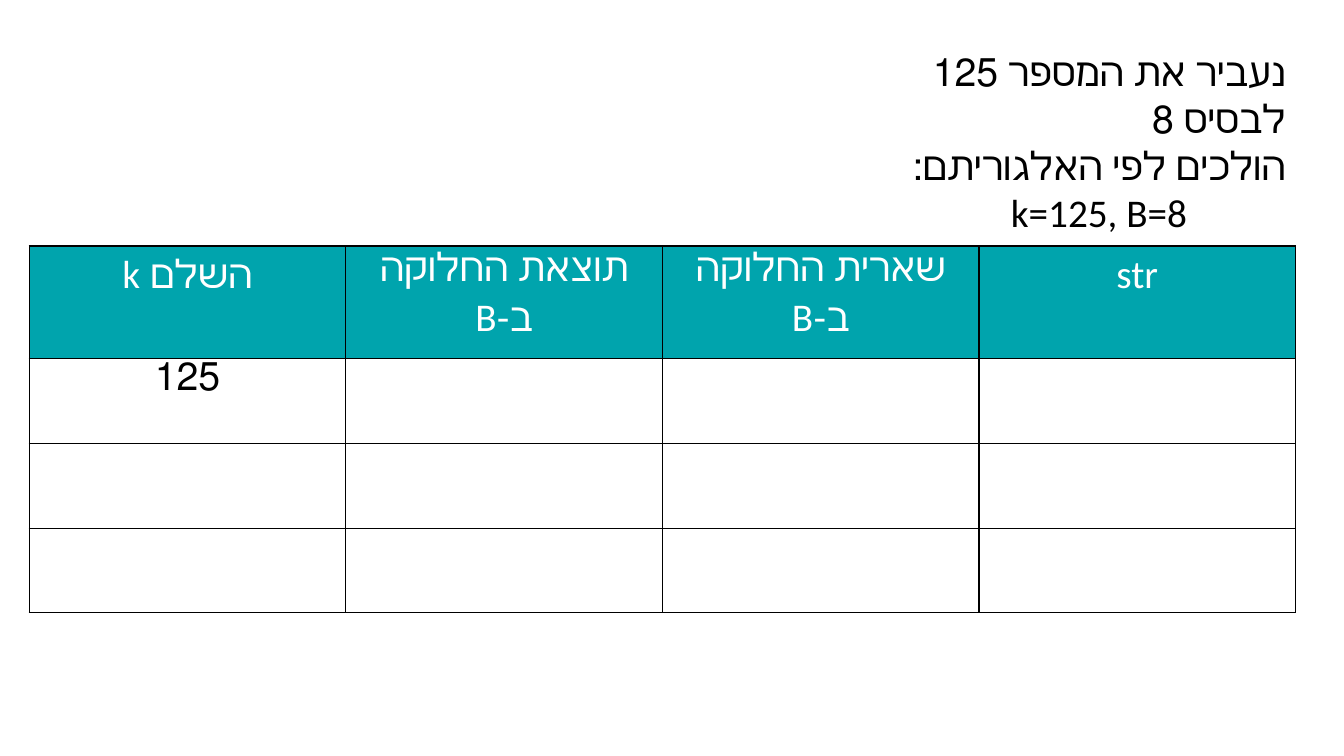
from lxml.etree import SubElement
from pptx import Presentation
from pptx.dml.color import RGBColor
from pptx.enum.text import MSO_ANCHOR, PP_ALIGN
from pptx.oxml.ns import qn
from pptx.util import Inches, Pt

TEAL, BLACK, WHITE = "00A4AD", "000000", "FFFFFF"
HEADERS = ["השלם k", "תוצאת החלוקה ב-B", "שארית החלוקה ב-B", "str"]
ROW_HEIGHTS = [1.12, 0.84, 0.84, 0.84]


def rgb(value):
    return RGBColor.from_string(value)


def write(p, text, color, align, rtl=True):
    p.alignment = align
    if rtl:
        p._p.get_or_add_pPr().set("rtl", "1")
    r = p.add_run()
    r.text = text
    r.font.name = "Calibri"
    r.font.size = Pt(28)
    r.font.color.rgb = rgb(color)


def add_intro(s):
    box = s.shapes.add_textbox(Inches(8.95), Inches(0.42), Inches(3.9), Inches(1.98))
    tf = box.text_frame
    tf.word_wrap = True
    write(tf.paragraphs[0], "נעביר את המספר 125 לבסיס 8", BLACK, PP_ALIGN.RIGHT)
    write(tf.add_paragraph(), "הולכים לפי האלגוריתם:", BLACK, PP_ALIGN.RIGHT)
    write(tf.add_paragraph(), "k=125, B=8", BLACK, PP_ALIGN.CENTER, rtl=False)


def set_borders(cell):
    tcPr = cell._tc.get_or_add_tcPr()
    for index, side in enumerate(("lnL", "lnR", "lnT", "lnB")):
        ln = tcPr.makeelement(qn("a:" + side), {"w": str(Pt(1))})
        fill = SubElement(ln, qn("a:solidFill"))
        SubElement(fill, qn("a:srgbClr"), val=BLACK)
        tcPr.insert(index, ln)


def add_division_table(s):
    frame = s.shapes.add_table(len(ROW_HEIGHTS), len(HEADERS), Inches(0.29),
                               Inches(2.44), Inches(12.56), Inches(sum(ROW_HEIGHTS)))
    table = frame.table
    for row, height in zip(table.rows, ROW_HEIGHTS):
        row.height = Inches(height)
        for cell in row.cells:
            cell.fill.solid()
            cell.fill.fore_color.rgb = rgb(WHITE)
            cell.margin_top = cell.margin_bottom = 0
            cell.vertical_anchor = MSO_ANCHOR.TOP
            set_borders(cell)
    for cell, header in zip(table.rows[0].cells, HEADERS):
        cell.fill.fore_color.rgb = rgb(TEAL)
        p = cell.text_frame.paragraphs[0]
        write(p, header, WHITE, PP_ALIGN.CENTER)
        p.line_spacing = 1.1
        p.space_before = Pt(10)
    write(table.cell(1, 0).text_frame.paragraphs[0], "125", BLACK, PP_ALIGN.CENTER)


def main():
    prs = Presentation()
    prs.slide_width = Inches(13.33)
    prs.slide_height = Inches(7.5)
    s = prs.slides.add_slide(prs.slide_layouts[6])
    add_intro(s)
    add_division_table(s)
    prs.save("out.pptx")


if __name__ == "__main__":
    main()
